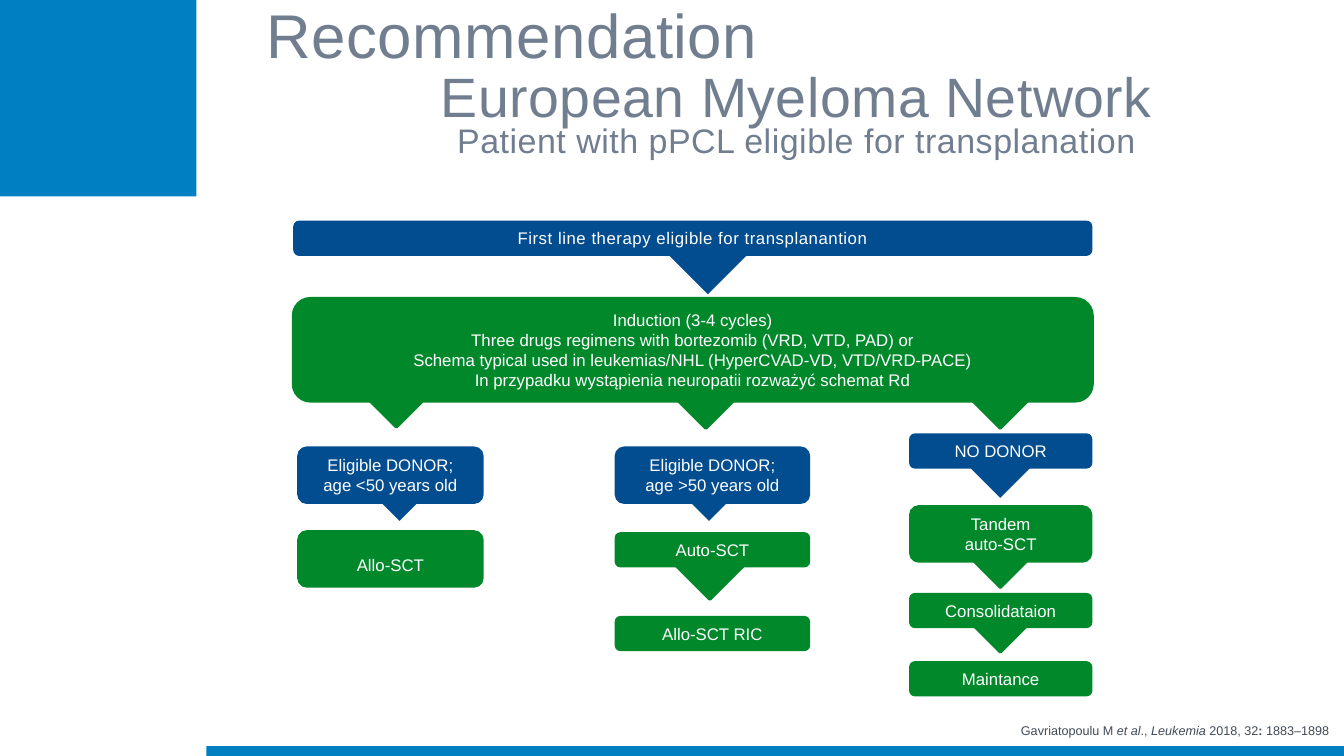
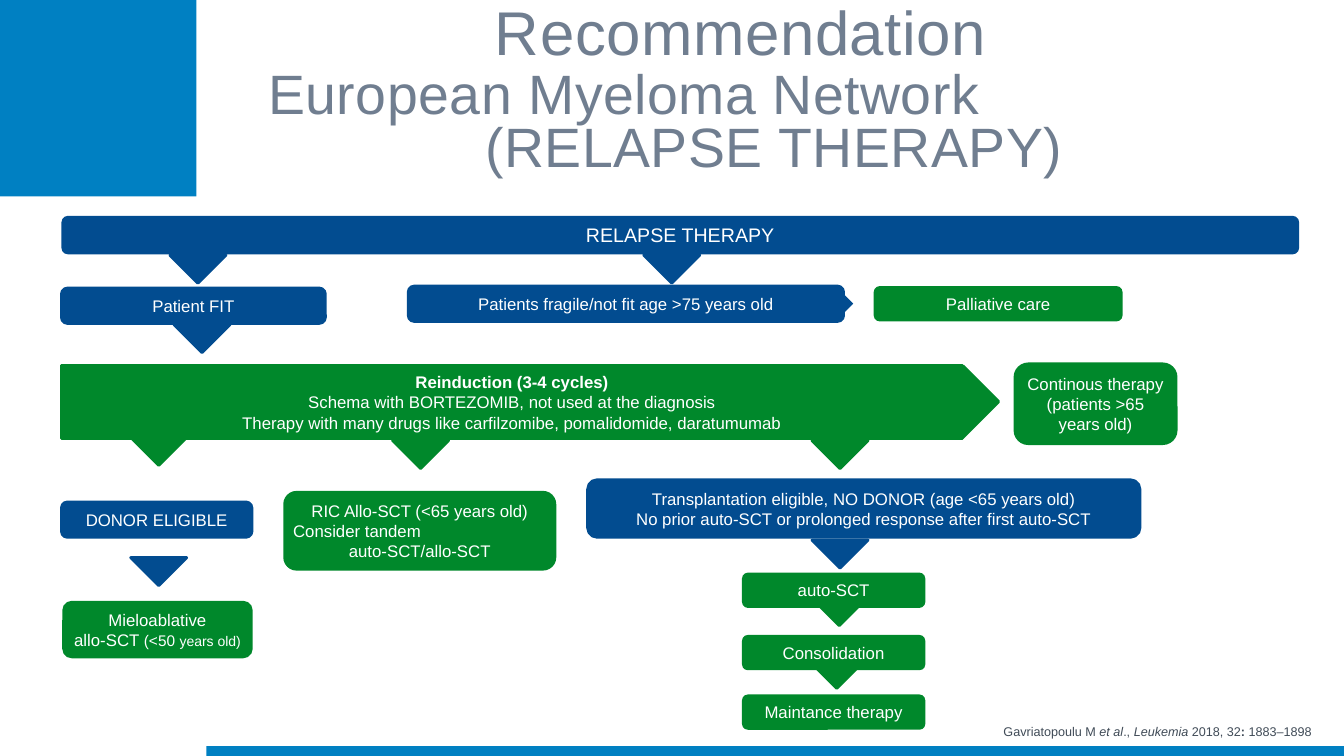
"""Build two treatment flowcharts for plasma cell leukemia."""
from dataclasses import dataclass

from pptx import Presentation
from pptx.dml.color import RGBColor
from pptx.enum.shapes import MSO_SHAPE
from pptx.enum.text import MSO_ANCHOR, MSO_AUTO_SIZE, PP_ALIGN
from pptx.util import Cm, Pt

RECTANGLE = MSO_SHAPE.RECTANGLE
ROUNDED = MSO_SHAPE.ROUNDED_RECTANGLE
TRIANGLE = MSO_SHAPE.RIGHT_TRIANGLE
TOP, MIDDLE, BOTTOM = MSO_ANCHOR.TOP, MSO_ANCHOR.MIDDLE, MSO_ANCHOR.BOTTOM
LEFT, CENTER = PP_ALIGN.LEFT, PP_ALIGN.CENTER
NO_AUTOFIT = MSO_AUTO_SIZE.NONE

BAND_BLUE = RGBColor(0x00, 0x80, 0xC2)
BLUE = RGBColor(0x02, 0x4C, 0x90)
GREEN = RGBColor(0x00, 0x88, 0x2B)
WHITE = RGBColor(0xFF, 0xFF, 0xFF)
TITLE_GRAY = RGBColor(0x70, 0x7E, 0x90)
CITATION_GRAY = RGBColor(0x40, 0x4B, 0x57)

FONT = "Arial"
SLIDE_WIDTH, SLIDE_HEIGHT = 33.87, 19.05
SINGLE, DOUBLE = 0.89, 1.45
DOWN, RIGHT = 315, 225
INSET = 0.15


@dataclass
class Run:
    """A piece of text with its own format."""
    text: str
    size: float = 12
    bold: bool = False
    italic: bool = False
    spacing: float = 0


@dataclass
class Line:
    """A paragraph made of runs."""
    runs: list
    alignment: PP_ALIGN = CENTER
    indent: float = 0


CITATION = Line([
    Run("Gavriatopoulu M ", 9),
    Run("et al", 9, italic=True),
    Run("., ", 9),
    Run("Leukemia ", 9, italic=True),
    Run("2018, 32", 9),
    Run(": ", 9, bold=True),
    Run("1883–1898", 9),
], LEFT)


def write_lines(frame, lines, color):
    """Fill a text frame; a plain string is a centred line."""
    for index, line in enumerate(lines):
        if isinstance(line, str):
            line = Line([Run(line)])
        paragraph = frame.paragraphs[0] if index == 0 else frame.add_paragraph()
        paragraph.alignment = line.alignment
        if line.indent:
            properties = paragraph._p.get_or_add_pPr()
            properties.set("marL", str(Cm(line.indent)))
            properties.set("indent", "0")
        for part in line.runs:
            run = paragraph.add_run()
            run.text = part.text
            run.font.name = FONT
            run.font.size = Pt(part.size)
            run.font.bold = part.bold
            run.font.italic = part.italic
            run.font.color.rgb = color
            if part.spacing:
                run._r.get_or_add_rPr().set("spc", str(int(part.spacing * 100)))


def set_margins(frame, margin):
    """Give a text frame the same margin on all sides."""
    frame.margin_left = frame.margin_right = Cm(margin)
    frame.margin_top = frame.margin_bottom = Cm(margin)


def add_filled(slide, kind, left, top, width, height, color, outlined=False):
    """Add a flat shape, with an outline of its own colour if asked."""
    shape = slide.shapes.add_shape(kind, Cm(left), Cm(top), Cm(width), Cm(height))
    shape.shadow.inherit = False
    shape.fill.solid()
    shape.fill.fore_color.rgb = color
    if outlined:
        shape.line.color.rgb = color
        shape.line.width = Pt(2)
    else:
        shape.line.fill.background()
    return shape


def add_box(slide, left, top, width, height, color, *lines, outlined=False, kind=ROUNDED):
    """Add a flowchart box with white text."""
    shape = add_filled(slide, kind, left, top, width, height, color, outlined)
    frame = shape.text_frame
    frame.word_wrap = True
    frame.vertical_anchor = MIDDLE
    set_margins(frame, INSET)
    write_lines(frame, lines, WHITE)
    return shape


def add_column(slide, left, width, steps):
    """Add boxes of one width below each other."""
    return [add_box(slide, left, top, width, height, color, *lines)
            for top, height, color, *lines in steps]


def add_pointer(slide, center_x, base_y, side, color, outlined=True, rotation=DOWN):
    """Add a triangle whose base is centred on the given point."""
    pointer = add_filled(slide, TRIANGLE, center_x - side / 2, base_y - side / 2,
                         side, side, color, outlined)
    pointer.rotation = rotation


def add_title(slide, left, top, width, *lines):
    """Place the title and write its lines."""
    title = slide.shapes.title
    title.left, title.top = Cm(left), Cm(top)
    title.width, title.height = Cm(width), Cm(4)
    frame = title.text_frame
    frame.word_wrap = True
    frame.auto_size = NO_AUTOFIT
    frame.vertical_anchor = TOP
    set_margins(frame, 0)
    write_lines(frame, lines, TITLE_GRAY)
    for paragraph in frame.paragraphs:
        paragraph.line_spacing = 0.8
    frame.paragraphs[1].space_before = Pt(3)


def title_line(text, size, alignment=CENTER, indent=0):
    """Return a title line in the shared letter spacing."""
    return Line([Run(text, size, spacing=0.4)], alignment, indent)


def add_citation(slide, left, top):
    """Add the literature reference."""
    box = slide.shapes.add_textbox(Cm(left), Cm(top), Cm(8.38), Cm(0.64))
    write_lines(box.text_frame, [CITATION], CITATION_GRAY)


def decorate_layout(layout, slide):
    """Give the layout its bands, leaving only the title placeholder."""
    for placeholder in list(layout.placeholders):
        if placeholder.placeholder_format.idx != 0:
            layout.shapes.element.remove(placeholder.element)
    for bounds in ((0, 0, 4.95, 4.95), (5.2, 18.8, SLIDE_WIDTH - 5.2, 0.25)):
        band = add_filled(slide, RECTANGLE, *bounds, BAND_BLUE)
        layout.shapes.element.append(band.element)


def build_first_line(slide):
    """Draw first line therapy."""
    add_title(slide, 5.44, 0.28, 28.02,
              title_line("Recommendation", 44.1, LEFT, 1.27),
              title_line("European Myeloma Network", 39.6),
              title_line("Patient with pPCL eligible for transplanation", 24.3))

    for center_x, base_y, color in (
            (17.84, 6.39, BLUE),
            (9.99, 9.74, GREEN), (17.79, 9.77, GREEN), (25.21, 9.77, GREEN),
            (10.07, 12.1, BLUE), (17.87, 12.1, BLUE), (17.89, 14.08, GREEN),
            (25.21, 11.52, BLUE), (25.21, 13.78, GREEN), (25.21, 15.41, GREEN)):
        add_pointer(slide, center_x, base_y, 1.45, color, outlined=color == GREEN)

    add_box(slide, 7.39, 5.56, 20.14, SINGLE, BLUE,
            Line([Run("First line therapy eligible for transplanantion", spacing=0.4)]))
    add_box(slide, 7.39, 7.52, 20.14, 2.59, GREEN,
            "Induction (3-4 cycles)",
            "Three drugs regimens with bortezomib (VRD, VTD, PAD) or",
            "Schema typical used in leukemias/NHL (HyperCVAD-VD, VTD/VRD-PACE)",
            "In przypadku wystąpienia neuropatii rozważyć schemat Rd",
            outlined=True)

    younger_boxes = add_column(slide, 7.49, 4.7, (
        (11.25, DOUBLE, BLUE, "Eligible DONOR;", "age <50 years old"),
        (13.36, DOUBLE, GREEN, "Allo-SCT")))
    allo_frame = younger_boxes[-1].text_frame
    allo_frame.vertical_anchor = BOTTOM
    allo_frame.margin_bottom = Cm(0.24)
    add_column(slide, 15.49, 4.93, (
        (11.25, DOUBLE, BLUE, "Eligible DONOR;", "age >50 years old"),
        (13.41, SINGLE, GREEN, "Auto-SCT"),
        (15.52, SINGLE, GREEN, "Allo-SCT RIC")))
    add_column(slide, 22.91, 4.62, (
        (10.92, SINGLE, BLUE, "NO DONOR"),
        (12.73, DOUBLE, GREEN, "Tandem", "auto-SCT"),
        (14.94, SINGLE, GREEN, "Consolidataion"),
        (16.66, SINGLE, GREEN, "Maintance")))
    add_citation(slide, 25.48, 18.08)


def build_relapse(slide):
    """Draw relapse therapy."""
    add_title(slide, 5.08, 0.2, 27.18,
              title_line("Recommendation", 44.1),
              title_line("European Myeloma Network", 39.6, LEFT, 1.68),
              title_line("(RELAPSE THERAPY)", 39.6))

    for center_x, base_y, color in (
            (4.99, 6.43, BLUE), (16.93, 6.43, BLUE), (5.09, 8.18, BLUE),
            (4, 11.02, GREEN), (10.6, 11.1, GREEN), (21.17, 11.1, GREEN),
            (4, 14.05, BLUE), (21.17, 13.61, BLUE),
            (21.15, 15.06, GREEN), (21.09, 16.64, GREEN)):
        add_pointer(slide, center_x, base_y, 1, color)
    add_pointer(slide, 21.17, 7.65, 0.47, BLUE, outlined=False, rotation=RIGHT)
    add_pointer(slide, 24.27, 10.12, 1.27, GREEN, rotation=RIGHT)

    add_box(slide, 1.55, 5.44, 31.19, 0.97, BLUE, Line([Run("RELAPSE THERAPY", 14)]))
    add_box(slide, 1.55, 7.26, 6.65, SINGLE, BLUE, "Patient FIT", outlined=True)
    add_box(slide, 10.29, 7.21, 10.97, SINGLE, BLUE,
            "Patients fragile/not fit age >75 years old", outlined=True)
    add_box(slide, 22.02, 7.21, 6.27, SINGLE, GREEN, "Palliative care")
    add_box(slide, 1.55, 9.22, 22.71, 1.83, GREEN,
            Line([Run("Reinduction (3-4 cycles)", bold=True)]),
            "Schema with BORTEZOMIB, not used at the diagnosis",
            "Therapy with many drugs like carfilzomibe, pomalidomide, daratumumab",
            outlined=True, kind=RECTANGLE)
    add_box(slide, 25.58, 9.17, 4.06, 2.01, GREEN,
            "Continous therapy (patients >65 years old)", outlined=True)

    add_box(slide, 1.55, 12.65, 4.8, SINGLE, BLUE, "DONOR ELIGIBLE", outlined=True)
    add_box(slide, 1.57, 15.14, 4.8, DOUBLE, GREEN, "Mieloablative",
            Line([Run("allo-SCT "), Run("(<50 ", 11), Run("years old)", 10)]))
    add_box(slide, 7.14, 12.37, 6.88, 2.01, GREEN,
            "RIC Allo-SCT (<65 years old)",
            Line([Run("Consider tandem")], LEFT),
            "auto-SCT/allo-SCT")
    add_box(slide, 14.81, 12.09, 13.92, DOUBLE, BLUE,
            "Transplantation eligible, NO DONOR (age <65 years old)",
            "No prior auto-SCT or prolonged response after first auto-SCT",
            outlined=True)
    add_column(slide, 18.7, 4.62, (
        (14.43, SINGLE, GREEN, "auto-SCT"),
        (16, SINGLE, GREEN, "Consolidation"),
        (17.5, SINGLE, GREEN, "Maintance therapy")))
    add_citation(slide, 25.04, 18.11)


def main():
    """Build and save the presentation."""
    presentation = Presentation()
    presentation.slide_width = Cm(SLIDE_WIDTH)
    presentation.slide_height = Cm(SLIDE_HEIGHT)
    layout = presentation.slide_layouts[5]
    first_line_slide = presentation.slides.add_slide(layout)
    decorate_layout(layout, first_line_slide)
    build_first_line(first_line_slide)
    build_relapse(presentation.slides.add_slide(layout))
    presentation.save("out.pptx")


if __name__ == "__main__":
    main()
